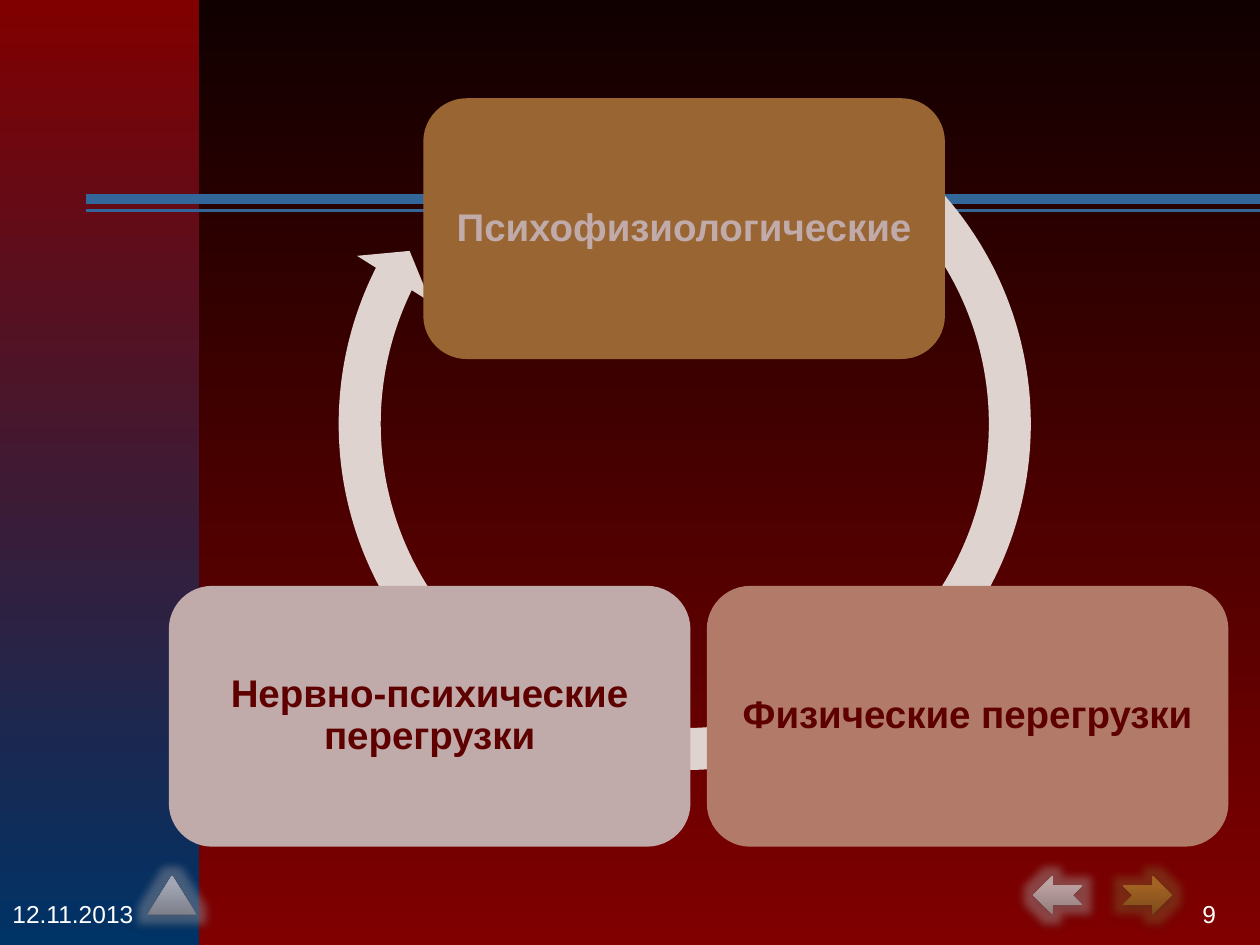
"""Build a slide with a three-part cycle of psychophysiological factors."""
from copy import deepcopy
from dataclasses import dataclass

from lxml.etree import SubElement
from pptx import Presentation
from pptx.dml.color import RGBColor
from pptx.dml.fill import FillFormat
from pptx.enum.shapes import MSO_CONNECTOR as Connector, MSO_SHAPE as Shape
from pptx.enum.text import MSO_ANCHOR as Anchor, PP_ALIGN as Align
from pptx.oxml.ns import qn
from pptx.shapes.autoshape import Shape as AutoShape
from pptx.slide import Slide
from pptx.text.text import TextFrame
from pptx.util import Inches, Pt

FONT = "Arial"
WHITE = "FFFFFF"
MAROON = "5F0000"
ROSE = "C0AAAA"
DOWN, UP = 270, 90


@dataclass
class Factor:
    text: str
    left: float
    top: float
    fill: str
    color: str


@dataclass
class NavButton:
    kind: Shape
    left: float
    stops: list[tuple[float, str]]
    glow: str
    flipped: bool = False


@dataclass
class Rule:
    top: float
    width: float


@dataclass
class Footer:
    text: str
    left: float
    align: Align
    wrap: bool


FACTORS = [
    Factor("Психофизиологические", 3.36, 0.78, "996633", ROSE),
    Factor("Физические перегрузки", 5.61, 4.65, "B27B69", MAROON),
    Factor("Нервно-психические перегрузки", 1.34, 4.65, ROSE, MAROON),
]
BUTTONS = [
    NavButton(Shape.NOTCHED_RIGHT_ARROW, 8.91,
              [(0, "7E4C1B"), (0.8, "A36323"), (1, "A66320")], "996633"),
    NavButton(Shape.NOTCHED_RIGHT_ARROW, 8.2,
              [(0, "927C7C"), (0.8, "BDA2A2"), (1, "BFA2A2")], ROSE, True),
    NavButton(Shape.FLOWCHART_EXTRACT, 1.17,
              [(0, "7D808B"), (0.8, "A3A6B4"), (1, "A3A7B6")], "A8ABB9"),
]
RULES = [Rule(1.67, 2), Rule(1.58, 6)]
FOOTERS = [
    Footer("9", 7.67, Align.RIGHT, False),
    Footer("12.11.2013", 0, Align.LEFT, True),
]


def rgb(value: str) -> RGBColor:
    """Turn a hex string into a colour."""
    return RGBColor.from_string(value)


def paint_gradient(fill: FillFormat, owner, stops: list[tuple[float, str]],
                   angle: int) -> None:
    """Fill with a linear gradient that has the given stops."""
    fill.gradient()
    fill.gradient_angle = angle
    stop_list = owner.xpath(".//a:gsLst")[0]
    for _ in stops[2:]:
        stop_list.append(deepcopy(stop_list[-1]))
    for stop, (position, color) in zip(fill.gradient_stops, stops):
        stop.position = position
        stop.color.rgb = rgb(color)


def add_plain(page: Slide, kind: Shape, left: float, top: float,
              width: float, height: float) -> AutoShape:
    """Add a preset shape without outline or shadow."""
    shape = page.shapes.add_shape(kind, Inches(left), Inches(top),
                                  Inches(width), Inches(height))
    shape.line.fill.background()
    shape.shadow.inherit = False
    return shape


def add_text(frame: TextFrame, text: str, size: float, color: str,
             align: Align, bold: bool = False) -> None:
    """Write one vertically centred paragraph."""
    frame.vertical_anchor = Anchor.MIDDLE
    para = frame.paragraphs[0]
    para.alignment = align
    span = para.add_run()
    span.text = text
    span.font.name = FONT
    span.font.size = Pt(size)
    span.font.bold = bold
    span.font.color.rgb = rgb(color)


def add_effect(effects, name: str, color: str, opacity: int,
               **settings: str) -> None:
    """Append a glow or shadow to an effect list."""
    effect = SubElement(effects, qn(f"a:{name}"), settings)
    tint = SubElement(effect, qn("a:srgbClr"), val=color)
    SubElement(tint, qn("a:alpha"), val=str(opacity * 1000))


def add_rule(page: Slide, rule: Rule) -> None:
    """Draw a horizontal rule to the right edge."""
    line = page.shapes.add_connector(
        Connector.STRAIGHT, Inches(0.68), Inches(rule.top),
        Inches(10), Inches(rule.top))
    line.line.color.rgb = rgb("336699")
    line.line.width = Pt(rule.width)
    SubElement(line._element.spPr, qn("a:effectLst"))


def add_footer(page: Slide, footer: Footer) -> None:
    """Add a text at the foot of the slide."""
    box = page.shapes.add_textbox(Inches(footer.left), Inches(7),
                                  Inches(2.08), Inches(0.5))
    box.text_frame.word_wrap = footer.wrap
    add_text(box.text_frame, footer.text, 14, WHITE, footer.align)


def add_button(page: Slide, button: NavButton) -> None:
    """Add a glowing navigation button."""
    shape = add_plain(page, button.kind, button.left, 6.95, 0.39, 0.31)
    paint_gradient(shape.fill, shape._element, button.stops, UP)
    if button.flipped:
        shape._element.spPr.xfrm.set("flipH", "1")
    effects = shape._element.spPr.find(qn("a:effectLst"))
    add_effect(effects, "glow", button.glow, 40, rad=str(Pt(10)))
    add_effect(effects, "outerShdw", "000000", 35, blurRad=str(Pt(3.1)),
               dist=str(Pt(1.8)), dir="5400000", rotWithShape="0")


def add_cycle_arrow(page: Slide) -> None:
    """Draw the circular arrow behind the factors."""
    arrow = add_plain(page, Shape.CIRCULAR_ARROW, 2.51, 0.44, 5.85, 5.85)
    arrow.fill.solid()
    arrow.fill.fore_color.rgb = rgb("DED3CE")
    for index, value in enumerate([0.057, 3.405, 123.896, 182.928, 0.059]):
        arrow.adjustments[index] = value


def add_factor(page: Slide, factor: Factor) -> None:
    """Add a rounded box that names one factor."""
    box = add_plain(page, Shape.ROUNDED_RECTANGLE, factor.left, factor.top,
                    4.14, 2.07)
    box.fill.solid()
    box.fill.fore_color.rgb = rgb(factor.fill)
    frame = box.text_frame
    frame.word_wrap = True
    frame.margin_left = frame.margin_right = Inches(0.09)
    frame.margin_top = frame.margin_bottom = Inches(0.09)
    add_text(frame, factor.text, 22, factor.color, Align.CENTER, bold=True)
    frame.paragraphs[0].line_spacing = 0.9


def main() -> None:
    """Build and save the deck."""
    deck = Presentation()
    deck.slide_width, deck.slide_height = Inches(10), Inches(7.5)
    page = deck.slides.add_slide(deck.slide_layouts[6])
    paint_gradient(page.background.fill, page._element,
                   [(0, "100000"), (1, "800000")], DOWN)
    band = add_plain(page, Shape.RECTANGLE, 0, 0, 1.58, 7.5)
    paint_gradient(band.fill, band._element,
                   [(0, "800000"), (1, "003366")], DOWN)
    for rule in RULES:
        add_rule(page, rule)
    for footer in FOOTERS:
        add_footer(page, footer)
    for button in BUTTONS:
        add_button(page, button)
    add_cycle_arrow(page)
    for factor in FACTORS:
        add_factor(page, factor)
    deck.save("out.pptx")


if __name__ == "__main__":
    main()
